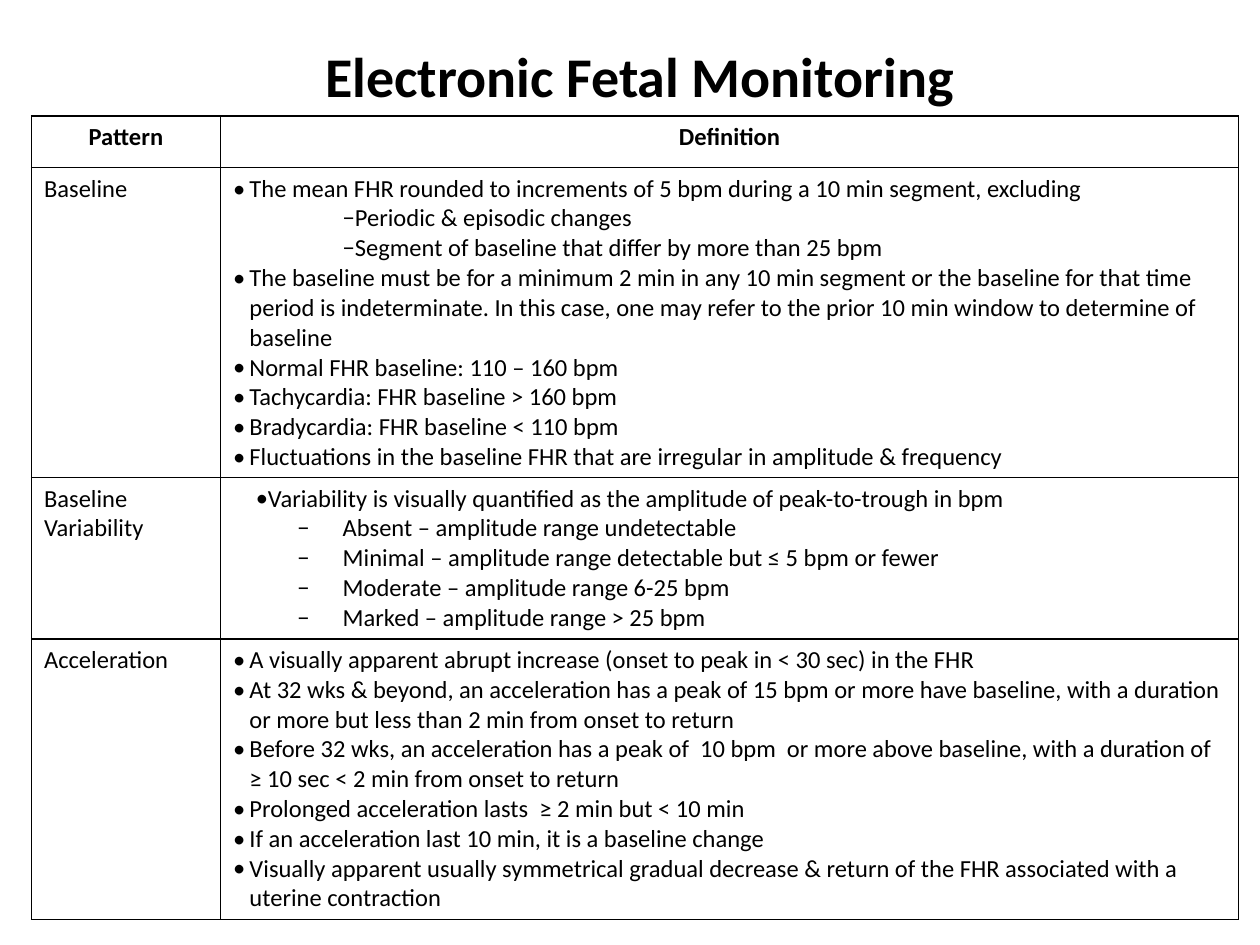
"""Build the Electronic Fetal Monitoring slide with its table of patterns."""
from lxml.etree import SubElement
from pptx import Presentation
from pptx.dml.color import RGBColor
from pptx.enum.text import MSO_ANCHOR as Anchor, PP_ALIGN as Align
from pptx.oxml.ns import qn
from pptx.util import Inches, Pt

BLACK, WHITE = "000000", "FFFFFF"
INDENTS = {
    "bullet": ("•", 0.13, -0.13),
    "inset bullet": ("•", 0, 0.18),
    "inset dash": ("−", 0.56, 0.31),
    "hanging dash": ("−", 0.87, -0.36),
}
COLUMN_WIDTHS = [1.5, 8.08]
ROW_HEIGHTS = [0.41, 2.46, 1.28, 2.23]
PATTERNS = [
    ("Baseline", [
        ("bullet", "The mean FHR rounded to increments of 5 bpm during a 10 min segment, excluding"),
        ("inset dash", "Periodic & episodic changes"),
        ("inset dash", "Segment of baseline that differ by more than 25 bpm"),
        ("bullet", "The baseline must be for a minimum 2 min in any 10 min segment or the baseline "
                   "for that time period is indeterminate. In this case, one may refer to the "
                   "prior 10 min window to determine of baseline"),
        ("bullet", "Normal FHR baseline: 110 – 160 bpm"),
        ("bullet", "Tachycardia: FHR baseline > 160 bpm"),
        ("bullet", "Bradycardia: FHR baseline < 110 bpm"),
        ("bullet", "Fluctuations in the baseline FHR that are irregular in amplitude & frequency"),
    ]),
    ("Baseline Variability", [
        ("inset bullet", "Variability is visually quantified as the amplitude of peak-to-trough in bpm"),
        ("hanging dash", "Absent – amplitude range undetectable"),
        ("hanging dash", "Minimal – amplitude range detectable but ≤ 5 bpm or fewer"),
        ("hanging dash", "Moderate – amplitude range 6-25 bpm"),
        ("hanging dash", "Marked – amplitude range > 25 bpm"),
    ]),
    ("Acceleration", [
        ("bullet", "A visually apparent abrupt increase (onset to peak in < 30 sec) in the FHR"),
        ("bullet", "At 32 wks & beyond, an acceleration has a peak of 15 bpm or more have baseline, "
                   "with a duration or more but less than 2 min from onset to return"),
        ("bullet", "Before 32 wks, an acceleration has a peak of  10 bpm  or more above baseline, "
                   "with a duration of ≥ 10 sec < 2 min from onset to return"),
        ("bullet", "Prolonged acceleration lasts  ≥ 2 min but < 10 min"),
        ("bullet", "If an acceleration last 10 min, it is a baseline change"),
        ("bullet", "Visually apparent usually symmetrical gradual decrease & return of the FHR "
                   "associated with a uterine contraction"),
    ]),
]


def color(hex_string):
    return RGBColor.from_string(hex_string)


def write(paragraph, text, size=14, bold=False, align=Align.LEFT):
    paragraph.alignment = align
    run = paragraph.add_run()
    run.text = text
    for name, value in {"name": "Calibri", "size": Pt(size), "bold": bold}.items():
        setattr(run.font, name, value)
    run.font.color.rgb = color(BLACK)


presentation = Presentation()
presentation.slide_width, presentation.slide_height = Inches(10), Inches(7.5)
slide = presentation.slides.add_slide(presentation.slide_layouts[6])

title = slide.shapes.add_textbox(Inches(0.58), Inches(0.25), Inches(9), Inches(0.7)).text_frame
for name, value in {"word_wrap": True, "vertical_anchor": Anchor.MIDDLE}.items():
    setattr(title, name, value)
write(title.paragraphs[0], "Electronic Fetal Monitoring", 32, True, Align.CENTER)

table = slide.shapes.add_table(
    len(ROW_HEIGHTS), len(COLUMN_WIDTHS), Inches(0.25), Inches(0.92),
    Inches(sum(COLUMN_WIDTHS)), Inches(sum(ROW_HEIGHTS))).table
for name, value in {"first_row": False, "horz_banding": False}.items():
    setattr(table, name, value)
for column, width in zip(table.columns, COLUMN_WIDTHS):
    column.width = Inches(width)
for row, height in zip(table.rows, ROW_HEIGHTS):
    row.height = Inches(height)

for cell in table.iter_cells():
    properties = cell._tc.get_or_add_tcPr()
    for side in ("lnL", "lnR", "lnT", "lnB"):
        border = SubElement(properties, qn(f"a:{side}"), w=str(Pt(1)))
        SubElement(SubElement(border, qn("a:solidFill")), qn("a:srgbClr"), val=BLACK)
    cell.fill.solid()
    cell.fill.fore_color.rgb = color(WHITE)

for column_index, heading in enumerate(("Pattern", "Definition")):
    heading_frame = table.cell(0, column_index).text_frame
    write(heading_frame.paragraphs[0], heading, bold=True, align=Align.CENTER)

for row_index, (pattern, definitions) in enumerate(PATTERNS, 1):
    write(table.cell(row_index, 0).text_frame.paragraphs[0], pattern)
    definition_frame = table.cell(row_index, 1).text_frame
    for item_index, (style, text) in enumerate(definitions):
        paragraph = definition_frame.add_paragraph() if item_index else definition_frame.paragraphs[0]
        write(paragraph, text)
        mark, margin, indent = INDENTS[style]
        properties = paragraph._p.get_or_add_pPr()
        for name, value in {"marL": margin, "indent": indent}.items():
            properties.set(name, str(Inches(value)))
        SubElement(properties, qn("a:buFont"), typeface="Calibri")
        SubElement(properties, qn("a:buChar"), char=mark)

presentation.save("out.pptx")
